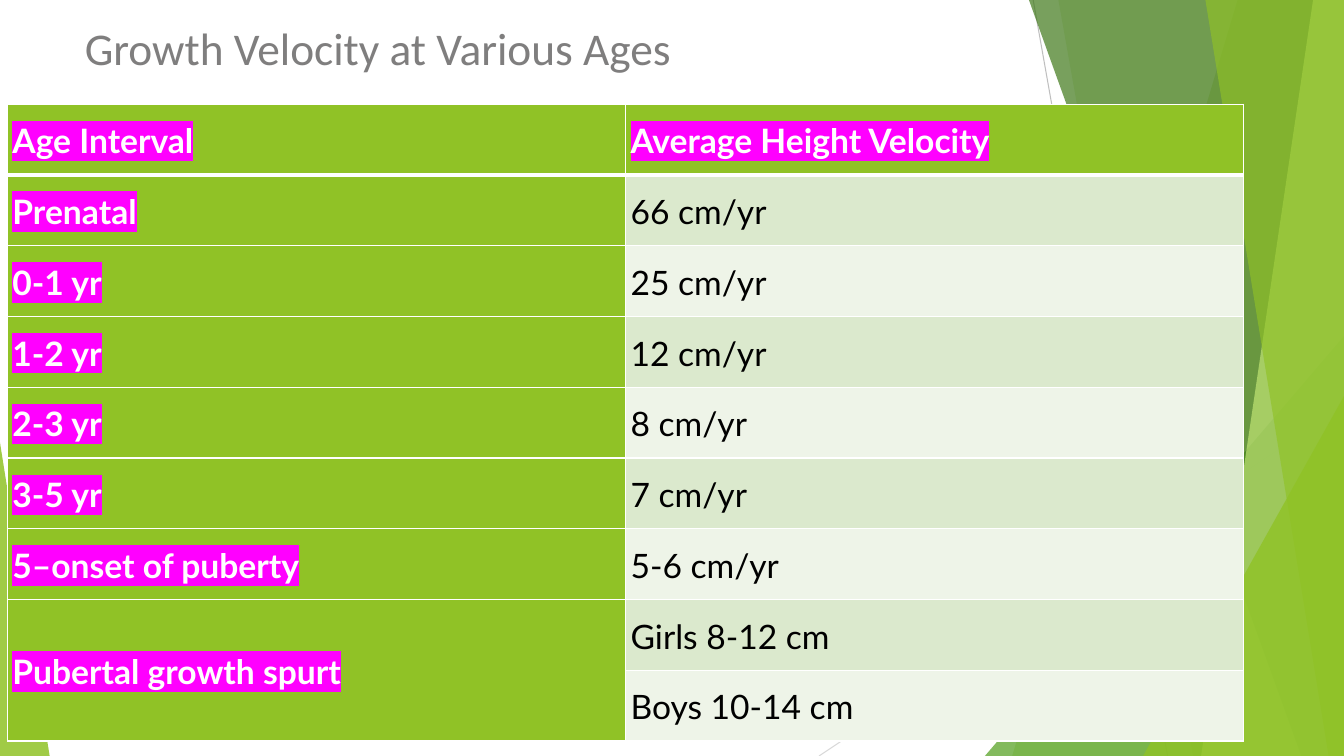
from lxml import etree
from pptx import Presentation
from pptx.dml.color import RGBColor
from pptx.enum import shapes, text
from pptx.oxml import ns
from pptx.util import Pt

WIDTH, HEIGHT = 960, 540
WHITE = RGBColor(0xFF, 0xFF, 0xFF)
BLACK = RGBColor(0x00, 0x00, 0x00)
GREY = RGBColor(0x7F, 0x7E, 0x7E)
RAY_DARK = RGBColor(0xBF, 0xBF, 0xBF)
RAY_LIGHT = RGBColor(0xD9, 0xD9, 0xD9)
LIME = RGBColor(0x90, 0xC2, 0x26)
LEAF = RGBColor(0x54, 0xA0, 0x21)
FOREST = RGBColor(0x3F, 0x78, 0x19)
PALE_LIME = RGBColor(0xC0, 0xE4, 0x74)
BAND_DARK = RGBColor(0xDB, 0xE9, 0xCD)
BAND_LIGHT = RGBColor(0xEE, 0xF4, 0xE8)
MAGENTA = RGBColor(0xFF, 0x00, 0xFF)

# Age interval and velocity; None continues the age cell above
VELOCITIES = [
    ("Age Interval", "Average Height Velocity"),
    ("Prenatal", "66 cm/yr"),
    ("0-1 yr", "25 cm/yr"),
    ("1-2 yr", "12 cm/yr"),
    ("2-3 yr", "8 cm/yr"),
    ("3-5 yr", "7 cm/yr"),
    ("5–onset of puberty", "5-6 cm/yr"),
    ("Pubertal growth spurt", "Girls 8-12 cm"),
    (None, "Boys 10-14 cm"),
]


def add_xml(parent, tag, **attributes):
    return etree.SubElement(parent, ns.qn(tag), attributes)


def paint(facet, color, opacity):
    facet.shadow.inherit = False
    facet.line.fill.background()
    facet.fill.solid()
    facet.fill.fore_color.rgb = color
    srgb = facet.fill._xPr.find(ns.qn("a:solidFill"))[0]
    add_xml(srgb, "a:alpha", val=str(opacity * 1000))


def add_ray(slide, start, end, color):
    ray = slide.shapes.add_connector(
        shapes.MSO_CONNECTOR.STRAIGHT, *map(Pt, start + end))
    ray.line.color.rgb = color
    ray.line.width = Pt(0.75)
    add_xml(ray._element.spPr, "a:effectLst")


def add_blade(slide, top_x, bottom_x, color, opacity):
    """Full-height facet between a slanted edge and the right slide edge."""
    outline = slide.shapes.build_freeform(Pt(top_x), 0)
    outline.add_line_segments(
        [(Pt(x), Pt(y)) for x, y in
         [(WIDTH, 0), (WIDTH, HEIGHT), (bottom_x, HEIGHT)]])
    paint(outline.convert_to_shape(), color, opacity)


def add_corner(slide, left, top, width, apex, color, opacity):
    """Triangle standing on the bottom edge of the slide."""
    corner = slide.shapes.add_shape(
        shapes.MSO_SHAPE.ISOSCELES_TRIANGLE,
        Pt(left), Pt(top), Pt(width), Pt(HEIGHT - top))
    corner.adjustments[0] = apex
    paint(corner, color, opacity)


def add_backdrop(slide):
    add_ray(slide, (738, 0), (834, HEIGHT), RAY_DARK)
    add_ray(slide, (WIDTH, 290), (585, HEIGHT), RAY_LIGHT)
    add_blade(slide, 884, 723, LIME, 30)
    add_blade(slide, 756, 852, LIME, 20)
    add_corner(slide, 703.5, 240, 256.5, 1, LEAF, 72)
    add_blade(slide, 735, 929.5, FOREST, 70)
    add_blade(slide, 938, 858, PALE_LIME, 70)
    add_blade(slide, 861, 949, LIME, 65)
    add_corner(slide, 816.5, 283, 143.5, 1, LIME, 80)
    add_corner(slide, 0, 316, 35.5, 0, LIME, 85)


def add_title(slide, left, top, width, height):
    title = slide.shapes.add_textbox(Pt(left), Pt(top), Pt(width), Pt(height))
    title.text_frame.word_wrap = True
    run = title.text_frame.paragraphs[0].add_run()
    run.text = "Growth Velocity at Various Ages"
    run.font.size = Pt(32.4)
    run.font.name = "Calibri"
    run.font.color.rgb = GREY


def set_borders(cell, bottom_width):
    properties = cell._tc.get_or_add_tcPr()
    sides = [("a:lnL", 1), ("a:lnR", 1), ("a:lnT", 1), ("a:lnB", bottom_width)]
    for index, (tag, width) in enumerate(sides):
        border = add_xml(properties, tag, w=str(Pt(width)))
        add_xml(add_xml(border, "a:solidFill"), "a:srgbClr", val=str(WHITE))
        properties.insert(index, border)


def write_cell(cell, words, highlighted):
    cell.vertical_anchor = text.MSO_ANCHOR.MIDDLE
    cell.margin_left = cell.margin_right = Pt(3.6)
    cell.margin_top = cell.margin_bottom = Pt(3.6)
    paragraph = cell.text_frame.paragraphs[0]
    paragraph.line_spacing = 1.07
    run = paragraph.add_run()
    run.text = words
    run.font.size = Pt(24)
    run.font.name = "Lato"
    run.font.bold = highlighted
    run.font.color.rgb = WHITE if highlighted else BLACK
    if highlighted:
        properties = run._r.get_or_add_rPr()
        highlight = add_xml(properties, "a:highlight")
        add_xml(highlight, "a:srgbClr", val=str(MAGENTA))
        properties.find(ns.qn("a:solidFill")).addnext(highlight)


def add_velocity_table(slide, left, top, width, height):
    table = slide.shapes.add_table(
        len(VELOCITIES), 2, Pt(left), Pt(top), Pt(width), Pt(height)).table
    table.first_row = table.horz_banding = False
    for row, entries in enumerate(VELOCITIES):
        for column, words in enumerate(entries):
            cell = table.cell(row, column)
            highlighted = row == 0 or column == 0
            band = BAND_DARK if row % 2 else BAND_LIGHT
            cell.fill.solid()
            cell.fill.fore_color.rgb = LIME if highlighted else band
            set_borders(cell, 3 if row == 0 else 1)
            if words is None:
                table.cell(row - 1, column).merge(cell)
            else:
                write_cell(cell, words, highlighted)


def main():
    deck = Presentation()
    deck.slide_width, deck.slide_height = Pt(WIDTH), Pt(HEIGHT)
    slide = deck.slides.add_slide(deck.slide_layouts[6])
    add_backdrop(slide)
    add_title(slide, 53.5, 11, 677, 52)
    add_velocity_table(slide, 5.3, 74.4, 883, 455)
    deck.save("out.pptx")


if __name__ == "__main__":
    main()
